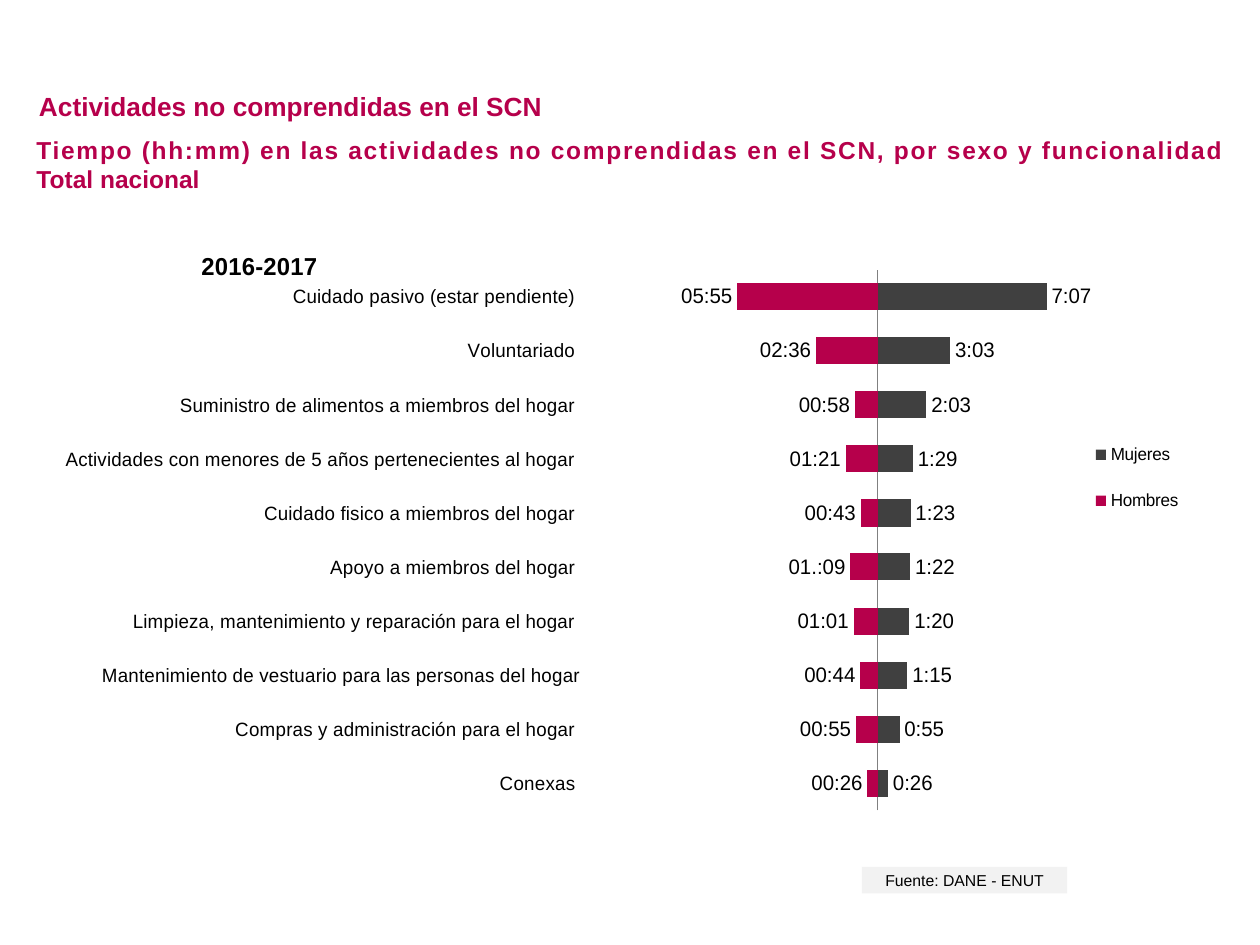
from dataclasses import dataclass
from math import ceil

from lxml import etree
from pptx import Presentation
from pptx.chart.data import CategoryChartData
from pptx.dml.color import RGBColor
from pptx.enum.chart import (XL_CHART_TYPE, XL_LABEL_POSITION, XL_LEGEND_POSITION,
                             XL_TICK_LABEL_POSITION, XL_TICK_MARK)
from pptx.enum.shapes import MSO_SHAPE
from pptx.enum.text import MSO_ANCHOR, PP_ALIGN
from pptx.oxml.ns import qn
from pptx.util import Inches, Pt

BAR = XL_CHART_TYPE.BAR_CLUSTERED
OUTSIDE = XL_LABEL_POSITION.OUTSIDE_END
RIGHT = XL_LEGEND_POSITION.RIGHT
LOW = XL_TICK_LABEL_POSITION.LOW
NO_TICK = XL_TICK_MARK.NONE
MIDDLE = MSO_ANCHOR.MIDDLE
CENTER = PP_ALIGN.CENTER


@dataclass(frozen=True)
class Theme:
    face: str = "Arial"
    accent: RGBColor = RGBColor(0xB6, 0x00, 0x4B)
    dark: RGBColor = RGBColor(0x40, 0x40, 0x40)
    text: RGBColor = RGBColor(0, 0, 0)
    axis: RGBColor = RGBColor(0x80, 0x80, 0x80)
    band: RGBColor = RGBColor(0xF2, 0xF2, 0xF2)
    heading: int = 15
    subtitle: int = 14
    labels: int = 12
    categories: int = 11
    legend: int = 10
    source: int = 9


T = Theme()


def set_font(font, size, color=T.text, bold=False):
    for name, value in dict(name=T.face, size=Pt(size), bold=bold).items():
        setattr(font, name, value)
    font.color.rgb = color


def place(element, index, **fractions):
    """Give a chart part a manual layout, in fractions of the chart."""
    for old in element.findall(qn("c:layout")):
        element.remove(old)
    layout = etree.Element(qn("c:layout"))
    manual = etree.SubElement(layout, qn("c:manualLayout"))
    if element.tag == qn("c:plotArea"):
        etree.SubElement(manual, qn("c:layoutTarget")).set("val", "inner")
    for mode in ("xMode", "yMode"):
        etree.SubElement(manual, qn("c:" + mode)).set("val", "edge")
    for key, value in fractions.items():
        etree.SubElement(manual, qn("c:" + key)).set("val", str(value))
    element.insert(index, layout)


prs = Presentation()
prs.slide_width, prs.slide_height = Inches(10), Inches(7.5)
s = prs.slides.add_slide(prs.slide_layouts[6])

# Headings: box, left and top inset, size, lines with letter spacing in 1/100 pt
HEADINGS = [
    ((0.31, 0.66, 7.53, 0.32), (0, 0.06), T.heading,
     [("Actividades no comprendidas en el SCN", 0)]),
    ((0.28, 1.07, 9.54, 0.47), (0.01, 0), T.subtitle,
     [("Tiempo (hh:mm) en las actividades no comprendidas en el SCN, "
       "por sexo y funcionalidad", 95),
      ("Total nacional", 0)]),
]
for box, insets, size, lines in HEADINGS:
    tf = s.shapes.add_textbox(*map(Inches, box)).text_frame
    tf.word_wrap = True
    tf.margin_right = tf.margin_bottom = 0
    tf.margin_left, tf.margin_top = map(Inches, insets)
    for i, (line, spacing) in enumerate(lines):
        p = tf.add_paragraph() if i else tf.paragraphs[0]
        r = p.add_run()
        r.text = line
        set_font(r.font, size, T.accent, True)
        if spacing:
            r.font._element.set("spc", str(spacing))

# Source band
sp = s.shapes.add_shape(MSO_SHAPE.RECTANGLE, *map(Inches, (6.84, 6.88, 1.63, 0.21)))
sp.shadow.inherit = False
sp.fill.solid()
sp.fill.fore_color.rgb = T.band
sp.line.fill.background()
tf = sp.text_frame
tf.word_wrap = True
tf.vertical_anchor = MIDDLE
p = tf.paragraphs[0]
p.alignment = CENTER
r = p.add_run()
r.text = "Fuente: DANE - ENUT"
set_font(r.font, T.source)

# Activity, minutes of men, minutes of women, label of men
ACTIVITIES = [
    ("Conexas ", 26, 26, "00:26"),
    ("Compras y administración para el hogar ", 55, 55, "00:55"),
    ("Mantenimiento de vestuario para las personas del hogar", 44, 75, "00:44"),
    ("Limpieza, mantenimiento y reparación para el hogar ", 61, 80, "01:01"),
    ("Apoyo a miembros del hogar ", 69, 82, "01.:09"),
    ("Cuidado fisico a miembros del hogar ", 43, 83, "00:43"),
    ("Actividades con menores de 5 años pertenecientes al hogar ", 81, 89, "01:21"),
    ("Suministro de alimentos a miembros del hogar ", 58, 123, "00:58"),
    ("Voluntariado ", 156, 183, "02:36"),
    ("Cuidado pasivo (estar pendiente) ", 355, 427, "05:55"),
]
DAY = 24 * 60
STEPS = 10000  # four decimals of a day, rounded up so that h:mm keeps the minute
names, men, women, men_labels = zip(*ACTIVITIES)
data = CategoryChartData()
data.categories = names
for name, minutes, sign in (("Hombres", men, -1), ("Mujeres ", women, 1)):
    data.add_series(name, [sign * ceil(m * STEPS / DAY) / STEPS for m in minutes], "h:mm")
chart = s.shapes.add_chart(BAR, *map(Inches, (0.52, 1.93, 9.08, 4.69)), data).chart
set_font(chart.font, T.legend)

plot = chart.plots[0]
plot.gap_width, plot.overlap, plot.vary_by_categories = 100, 100, False
for series, color, fmt in zip(plot.series, (T.accent, T.dark), ("@", "h:mm")):
    series.invert_if_negative = False
    series.format.fill.solid()
    series.format.fill.fore_color.rgb = color
    labels = series.data_labels
    for name, value in dict(show_value=True, number_format=fmt,
                            number_format_is_linked=False, position=OUTSIDE).items():
        setattr(labels, name, value)
    set_font(labels.font, T.labels)
for i, text in enumerate(men_labels):
    label = plot.series[0].points[i].data_label
    r = label.text_frame.paragraphs[0].add_run()
    r.text = text
    set_font(r.font, T.labels)
    label.position = OUTSIDE

axis = chart.category_axis
axis.tick_label_position = LOW
axis.major_tick_mark = axis.minor_tick_mark = NO_TICK
axis.format.line.color.rgb = T.axis
axis.format.line.width = Pt(0.75)
set_font(axis.tick_labels.font, T.categories)
axis = chart.value_axis
axis.minimum_scale, axis.maximum_scale = -0.5, 0.5
axis.has_major_gridlines = False
axis.visible = False

chart.has_title = True
title = chart.chart_title
r = title.text_frame.paragraphs[0].add_run()
r.text = "2016-2017"
set_font(r.font, T.subtitle, bold=True)
chart.has_legend = True
legend = chart.legend
legend.position = RIGHT
legend.include_in_layout = False
set_font(legend.font, T.legend)

place(chart._chartSpace.chart.plotArea, 0, x=0.447, y=0.045, w=0.511, h=0.915)
place(title._element, 1, x=0.092, y=0.005)
place(legend._element, 1, x=0.885, y=0.297, w=0.1, h=0.2)

prs.save("out.pptx")
